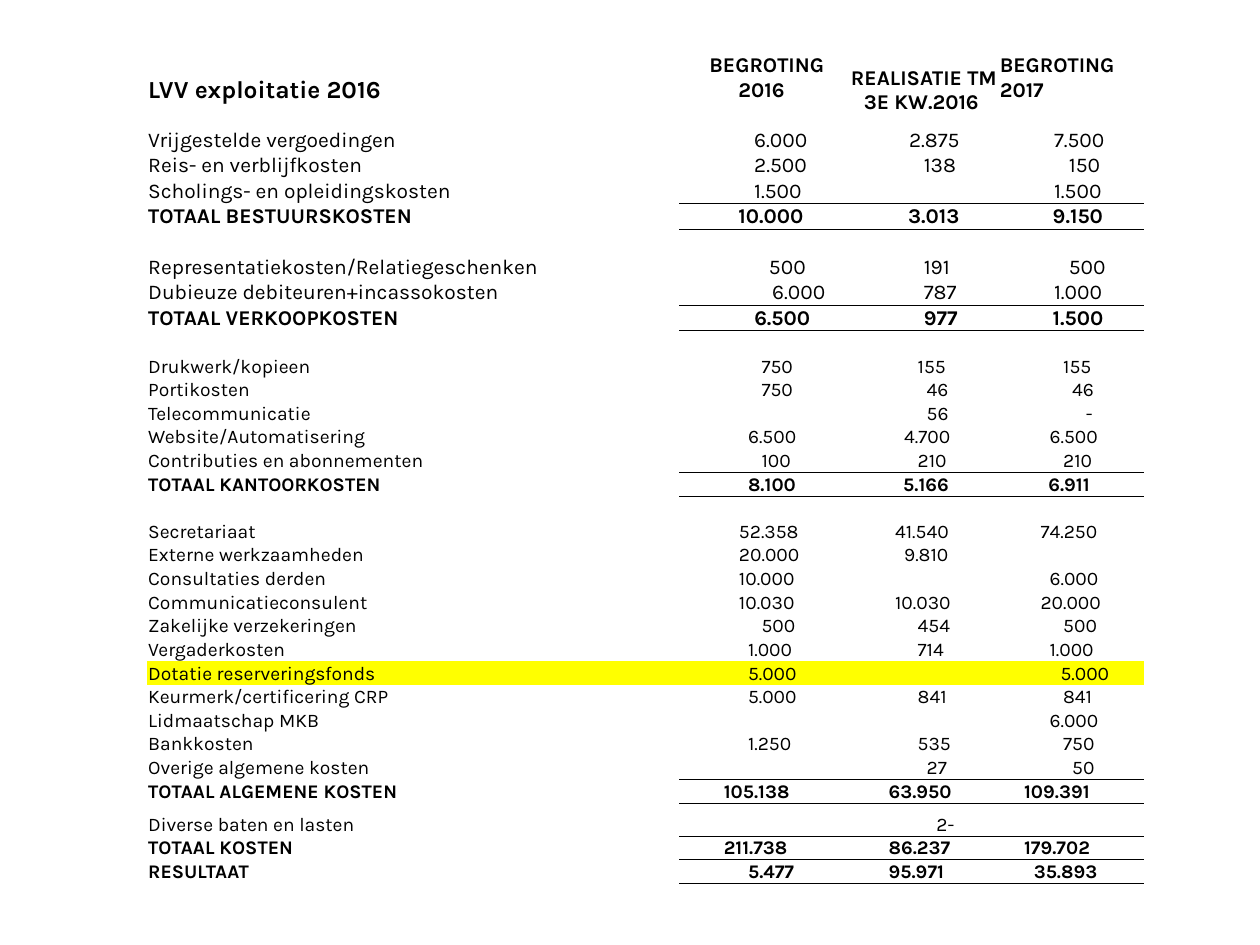
"""Build a one-slide budget overview with grouped cost rows and ruled totals."""
from pptx import Presentation
from pptx.dml.color import RGBColor
from pptx.enum.text import MSO_ANCHOR, PP_ALIGN
from pptx.oxml import parse_xml
from pptx.oxml.ns import nsdecls, qn
from pptx.util import Pt

TOP, MIDDLE, BOTTOM = MSO_ANCHOR.TOP, MSO_ANCHOR.MIDDLE, MSO_ANCHOR.BOTTOM
LEFT, CENTER = PP_ALIGN.LEFT, PP_ALIGN.CENTER

FONT = "Karla"
COLORS = {"ink": "000000", "highlight": "FFFF00"}
PLAIN_STYLE = "{2D5ABB26-0587-4C30-8999-92F81FD0307C}"
INSET = 0.5
COLUMN_WIDTHS = [304, 97, 85.7, 82.8]
HEADER_HEIGHT = 42.5
ROW_HEIGHTS = {12: 14.5, 11: 13.5}
RESULT_GAP_HEIGHT = 19
EMPTY_SIZE = 8

SPACE_EM = {False: 0.235, True: 0.252}
COLUMN_PAD = {False: [15, 12, 11], True: [14, 11, 10]}
LENGTH_PAD = {
    False: {1: 8, 2: 5, 3: 3, 5: 0, 6: -2},
    True: {3: 3, 5: 0, 6: -3, 7: -5},
}
EXTRA_INDENT = {
    ("Dubieuze debiteuren+incassokosten", 0): 10.3,
    ("Dotatie reserveringsfonds", 2): 6.3,
    ("Diverse baten en lasten", 1): 5.5,
}
HIGHLIGHTED = "Dotatie reserveringsfonds"
RESULT_GAP = "Diverse baten en lasten"

HEADINGS = [
    ("LVV exploitatie 2016", 14, MIDDLE, LEFT),
    (" BEGROTING 2016 ", 12, TOP, CENTER),
    ("REALISATIE TM 3E KW.2016 ", 12, MIDDLE, CENTER),
    ("BEGROTING 2017", 12, TOP, LEFT),
]
BLANK = ("", "", "", "")
LARGE_ROWS = [
    ("Vrijgestelde vergoedingen", "6.000", "2.875", "7.500"),
    ("Reis- en verblijfkosten", "2.500", "138", "150"),
    ("Scholings- en opleidingskosten", "1.500", "", "1.500"),
    ("TOTAAL BESTUURSKOSTEN", "10.000", "3.013", "9.150"),
    BLANK,
    ("Representatiekosten/Relatiegeschenken", "500", "191", "500"),
    ("Dubieuze debiteuren+incassokosten", "6.000", "787", "1.000"),
    ("TOTAAL VERKOOPKOSTEN", "6.500", "977", "1.500"),
]
SMALL_ROWS = [
    BLANK,
    ("Drukwerk/kopieen", "750", "155", "155"),
    ("Portikosten", "750", "46", "46"),
    ("Telecommunicatie", "", "56", "-"),
    ("Website/Automatisering", "6.500", "4.700", "6.500"),
    ("Contributies en abonnementen", "100", "210", "210"),
    ("TOTAAL KANTOORKOSTEN", "8.100", "5.166", "6.911"),
    BLANK,
    ("Secretariaat", "52.358", "41.540", "74.250"),
    ("Externe werkzaamheden", "20.000", "9.810", ""),
    ("Consultaties derden", "10.000", "", "6.000"),
    ("Communicatieconsulent", "10.030", "10.030", "20.000"),
    ("Zakelijke verzekeringen", "500", "454", "500"),
    ("Vergaderkosten", "1.000", "714", "1.000"),
    ("Dotatie reserveringsfonds", "5.000", "", "5.000"),
    ("Keurmerk/certificering CRP", "5.000", "841", "841"),
    ("Lidmaatschap MKB", "", "", "6.000"),
    ("Bankkosten", "1.250", "535", "750"),
    ("Overige algemene kosten", "", "27", "50"),
    ("TOTAAL ALGEMENE KOSTEN", "105.138", "63.950", "109.391"),
    ("Diverse baten en lasten", "", "2-", ""),
    ("TOTAAL KOSTEN", "211.738", "86.237", "179.702"),
    ("RESULTAAT", "5.477", "95.971", "35.893"),
]


def is_total(label):
    """Tell whether a row label marks a total."""
    return label.startswith(("TOTAAL", "RESULTAAT"))


def amount_indent(label, column, amount, size):
    """Return the indent in points that lines an amount up in its column."""
    bold = is_total(label)
    spaces = COLUMN_PAD[bold][column] + LENGTH_PAD[bold][len(amount)]
    return spaces * SPACE_EM[bold] * size + EXTRA_INDENT.get((label, column), 0)


def write_cell(cell, text, size, bold, anchor=BOTTOM, align=LEFT, indent=0):
    """Fill one cell with a single formatted run."""
    cell.margin_left = cell.margin_right = cell.margin_top = Pt(INSET)
    cell.margin_bottom = Pt(0)
    cell.vertical_anchor = anchor
    cell.fill.background()
    paragraph = cell.text_frame.paragraphs[0]
    paragraph.alignment = align
    if indent:
        paragraph._p.get_or_add_pPr().set("marL", str(int(Pt(indent))))
    if not text:
        paragraph._p.get_or_add_endParaRPr().set("sz", str(EMPTY_SIZE * 100))
        return
    run = paragraph.add_run()
    run.text = text
    run.font.name = FONT
    run.font.size = Pt(size)
    run.font.bold = bold
    run.font.color.rgb = RGBColor.from_string(COLORS["ink"])


def rule_below(cell):
    """Draw a thin rule along the bottom of a cell."""
    cell._tc.get_or_add_tcPr().insert(0, parse_xml(
        f'<a:lnB {nsdecls("a")} w="{int(Pt(0.5))}"><a:solidFill>'
        f'<a:srgbClr val="{COLORS["ink"]}"/></a:solidFill></a:lnB>'))


def write_row(cells, row, size, ruled):
    """Write a cost label and its three amounts."""
    label, *amounts = row
    write_cell(cells[0], label, size, is_total(label))
    for column, amount in enumerate(amounts):
        indent = amount_indent(label, column, amount, size) if amount else 0
        write_cell(cells[column + 1], amount, size, is_total(label), indent=indent)
        if ruled:
            rule_below(cells[column + 1])
    if label == HIGHLIGHTED:
        for cell in cells:
            cell.fill.solid()
            cell.fill.fore_color.rgb = RGBColor.from_string(COLORS["highlight"])


def add_budget(slide, left, top):
    """Place the budget table with its corner at the given point."""
    rows = [(row, 12) for row in LARGE_ROWS] + [(row, 11) for row in SMALL_ROWS]
    heights = [HEADER_HEIGHT] + [
        RESULT_GAP_HEIGHT if row[0] == RESULT_GAP else ROW_HEIGHTS[size]
        for row, size in rows]
    budget = slide.shapes.add_table(
        len(heights), len(COLUMN_WIDTHS), Pt(left), Pt(top),
        Pt(sum(COLUMN_WIDTHS)), Pt(sum(heights))).table
    budget.first_row = budget.horz_banding = False
    budget._tbl.tblPr.find(qn("a:tableStyleId")).text = PLAIN_STYLE
    for column, width in zip(budget.columns, COLUMN_WIDTHS):
        column.width = Pt(width)
    for line, height in zip(budget.rows, heights):
        line.height = Pt(height)
    for column, (text, size, anchor, align) in enumerate(HEADINGS):
        write_cell(budget.cell(0, column), text, size, True, anchor, align)
    following = [row[0] for row, _ in rows[1:]] + [""]
    for index, ((row, size), next_label) in enumerate(zip(rows, following), start=1):
        cells = [budget.cell(index, column) for column in range(len(COLUMN_WIDTHS))]
        write_row(cells, row, size, is_total(row[0]) or is_total(next_label))


def main():
    """Create the presentation and save it."""
    deck = Presentation()
    deck.slide_width, deck.slide_height = Pt(720), Pt(540)
    slide = deck.slides.add_slide(deck.slide_layouts[6])
    add_budget(slide, 84.2, 30.2)
    deck.save("out.pptx")


if __name__ == "__main__":
    main()
